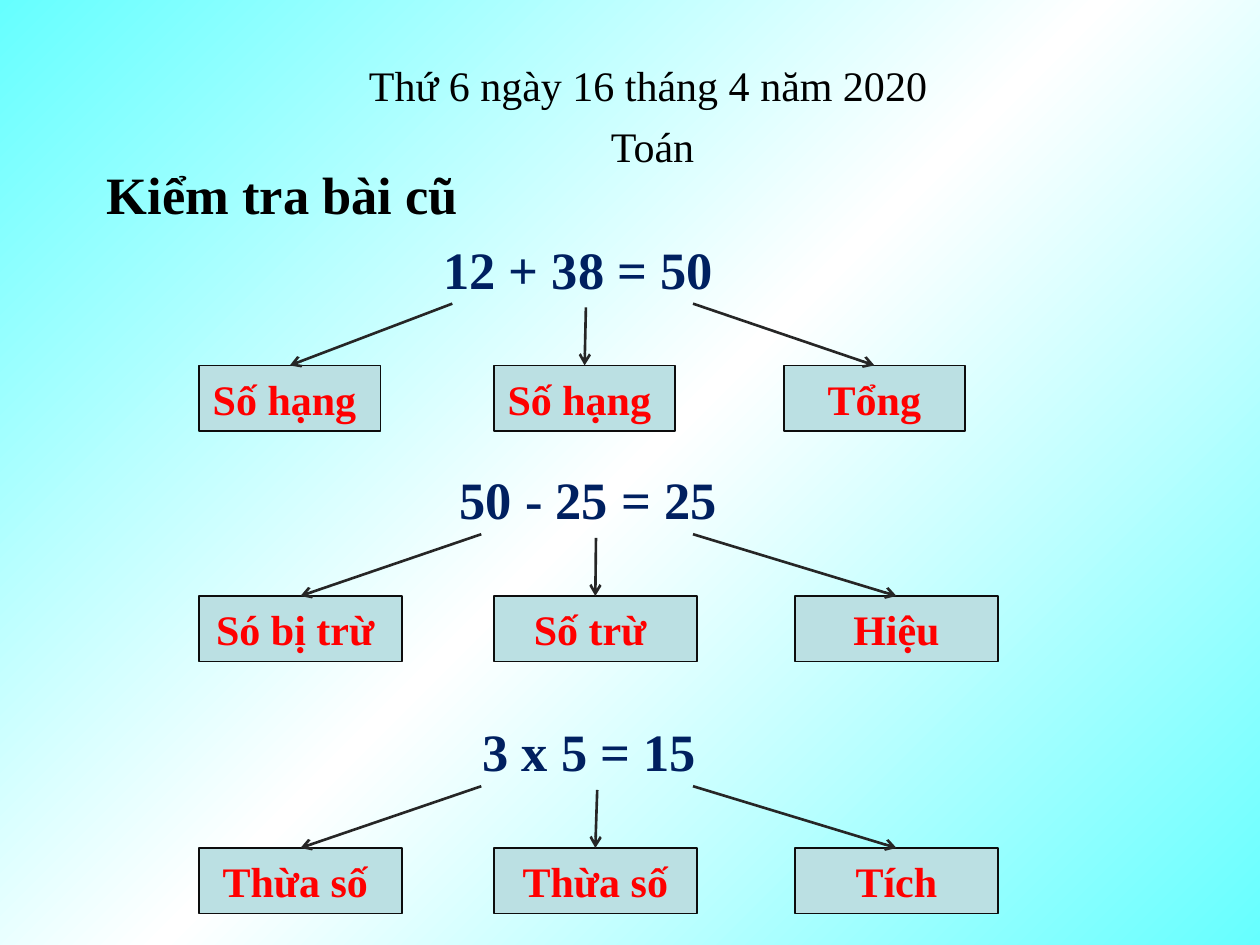
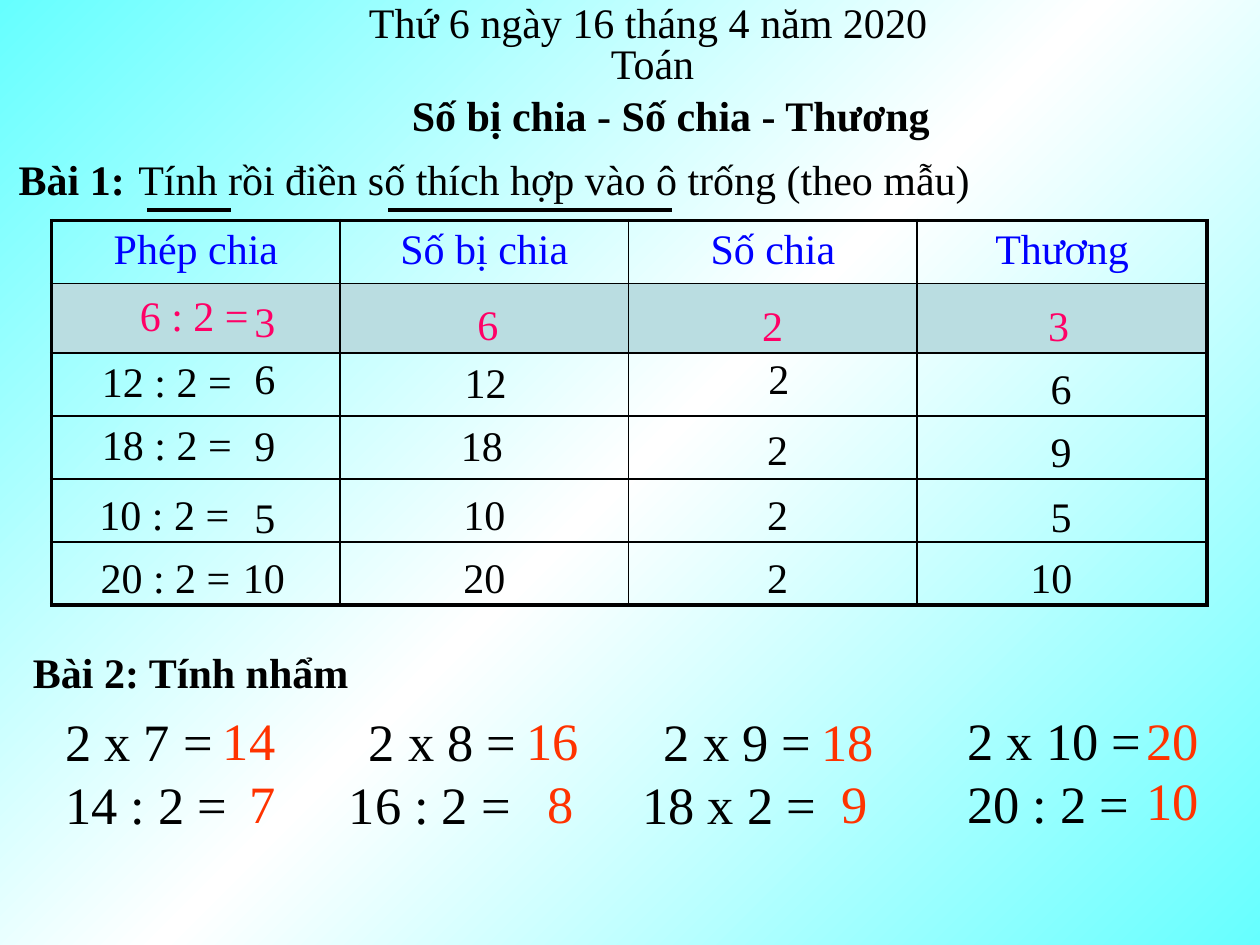
from copy import deepcopy

from lxml import etree
from pptx import Presentation
from pptx.dml.color import RGBColor
from pptx.enum import shapes, text
from pptx.oxml.ns import qn
from pptx.util import Inches, Pt

# Shared look
COLORS = {
    "cyan": "66FFFF", "white": "FFFFFF", "black": "000000", "navy": "002060",
    "red": "FF0000", "box": "BBE0E3", "box_line": "0D0D0D", "arrow": "262626",
    "head": "0000FF", "sample": "FF0066", "sample_row": "BADDE1",
    "answer": "FF3300",
}
FONT = "Times New Roman"
DATE, SUBJECT = "Thứ 6 ngày 16 tháng 4 năm 2020", "Toán"

# Review slide: equation, left, width, top, label width, label lefts,
# labels, arrow starts
EQUATIONS = [
    ("12 + 38 = 50", 3.42, 2.47, 1.83, 1.44, (1.58, 3.92, 6.22),
     ("Số hạng ", "Số hạng ", "Tổng"), (3.59, 4.65, 5.5)),
    ("50 - 25 = 25", 3.55, 2.37, 3.66, 1.61, (1.58, 3.92, 6.31),
     ("Só bị trừ ", "Số trừ ", "Hiệu"), (3.82, 4.73, 5.5)),
    ("3 x 5 = 15", 3.73, 2.02, 5.66, 1.61, (1.58, 3.92, 6.31),
     ("Thừa số ", "Thừa số", "Tích"), (3.82, 4.74, 5.5)),
]

# Exercise 1: table and the values written over it (text, left, top, width)
HEADERS = ["Phép chia", "Số bị chia", "Số chia", "Thương"]
SAMPLE = "6 : 2 ="
COL_WIDTHS = [2.29, 2.29, 2.29, 2.3]
ROW_HEIGHTS = [0.5, 0.55, 0.5, 0.5, 0.5, 0.5]
SAMPLE_VALUES = [("3", 1.92, 2.3, 0.5), ("6", 3.69, 2.32, 0.5),
                 ("2", 5.95, 2.33, 0.5), ("3", 8.22, 2.33, 0.5)]
DIVISIONS = [
    ("12 : 2 =", 0.71, 2.77, 1.69), ("6", 1.92, 2.75, 0.67),
    ("12", 3.59, 2.78, 0.67), ("2", 6, 2.75, 0.5), ("6", 8.24, 2.83, 0.67),
    ("18 : 2 =", 0.71, 3.27, 1.75), ("9", 1.92, 3.28, 0.67),
    ("18", 3.56, 3.28, 0.67), ("2", 5.99, 3.31, 0.5), ("9", 8.24, 3.33, 0.67),
    ("10 : 2 =", 0.69, 3.83, 1.39), ("5", 1.92, 3.85, 0.67),
    ("10", 3.58, 3.83, 0.67), ("2", 5.99, 3.83, 0.5), ("5", 8.24, 3.84, 0.67),
    ("20 : 2 =", 0.7, 4.33, 1.8), ("10", 1.83, 4.33, 0.66),
    ("20", 3.58, 4.33, 0.67), ("2", 5.99, 4.33, 0.5), ("10", 8.08, 4.33, 0.67),
]
UNDERLINES = [(1.17, 1.83), (3.08, 5.33)]

# Exercise 2: (text, left, top, width)
QUESTIONS = [
    ("2 x 7 =", 0.42, 5.58, 1.83), ("14 : 2 =", 0.42, 6.08, 2),
    ("2 x 8 =", 2.83, 5.58, 1.83), ("16 : 2 =", 2.67, 6.08, 1.83),
    ("2 x 9 =", 5.17, 5.58, 1.5), ("18 x 2 =", 5, 6.08, 1.75),
    ("2 x 10 =", 7.58, 5.57, 1.58), ("20 : 2 =", 7.58, 6.07, 1.83),
]
ANSWERS = [
    ("14", 1.67, 5.57, 0.67), ("7", 1.88, 6.07, 0.54),
    ("16", 4.08, 5.57, 0.67), ("8", 4.25, 6.07, 0.5),
    ("18", 6.42, 5.58, 0.67), ("9", 6.58, 6.07, 0.5),
    ("20", 9, 5.57, 0.67), ("10", 9, 6.05, 0.75),
]


def rgb(name):
    return RGBColor.from_string(COLORS[name])


def write(tf, value, color="black", size=24, bold=False, align=None):
    p = tf.paragraphs[0]
    p.alignment = align
    r = p.add_run()
    r.text = value
    for key, val in {"name": FONT, "size": Pt(size), "bold": bold}.items():
        setattr(r.font, key, val)
    r.font.color.rgb = rgb(color)


def add_text(s, value, x, y, w, wrap=True, size=24, **style):
    h = 0.61 if size == 30 else 0.5
    tf = s.shapes.add_textbox(*map(Inches, (x, y, w, h))).text_frame
    tf.word_wrap = wrap
    tf.auto_size = text.MSO_AUTO_SIZE.SHAPE_TO_FIT_TEXT
    write(tf, value, size=size, **style)


def add_line(s, x1, y1, x2, y2, color, width, arrow=False):
    c = s.shapes.add_connector(shapes.MSO_CONNECTOR.STRAIGHT,
                               *map(Inches, (x1, y1, x2, y2)))
    c.line.color.rgb, c.line.width = rgb(color), Pt(width)
    if arrow:
        etree.SubElement(c.line._get_or_add_ln(), qn("a:tailEnd"), type="arrow")
    etree.SubElement(c._element.spPr, qn("a:effectLst"))


def add_label(s, value, x, y, w, h=0.52):
    sp = s.shapes.add_shape(shapes.MSO_SHAPE.RECTANGLE,
                            *map(Inches, (x, y, w, h)))
    sp.shadow.inherit = False
    sp.fill.solid()
    sp.fill.fore_color.rgb = rgb("box")
    sp.line.color.rgb, sp.line.width = rgb("box_line"), Pt(1)
    sp.text_frame.vertical_anchor = text.MSO_ANCHOR.MIDDLE
    write(sp.text_frame, value, "red", bold=True, align=text.PP_ALIGN.CENTER)


def set_borders(cell, widths):
    tc_pr = cell._tc.get_or_add_tcPr()
    for i, (side, width) in enumerate(widths.items()):
        ln = etree.Element(qn(f"a:ln{side}"), w=str(Pt(width)))
        fill = etree.SubElement(ln, qn("a:solidFill"))
        etree.SubElement(fill, qn("a:srgbClr"), val=COLORS["black"])
        tc_pr.insert(i, ln)


def add_slide(prs, date_top, subject_top):
    s = prs.slides.add_slide(prs.slide_layouts[6])
    # Diagonal three-stop background
    fill = s.background.fill
    fill.gradient()
    fill.gradient_angle = 315
    stops = next(s.element.iter(qn("a:gsLst")))
    stops.insert(1, deepcopy(stops[0]))
    for stop, pos, color in zip(fill.gradient_stops, (0, 0.5, 1),
                                ("cyan", "white", "cyan")):
        stop.position, stop.color.rgb = pos, rgb(color)
    add_text(s, SUBJECT, 4.75, subject_top, 0.87, wrap=False)
    add_text(s, DATE, 2.83, date_top, 4.67, wrap=False)
    return s


def add_division_table(s):
    n_rows, n_cols = len(ROW_HEIGHTS), len(COL_WIDTHS)
    tbl = s.shapes.add_table(n_rows, n_cols, *map(Inches, (
        0.41, 1.75, sum(COL_WIDTHS), sum(ROW_HEIGHTS)))).table
    tbl.first_row = tbl.horz_banding = False
    for col, w in zip(tbl.columns, COL_WIDTHS):
        col.width = Inches(w)
    for row, h in zip(tbl.rows, ROW_HEIGHTS):
        row.height = Inches(h)
    for i in range(n_rows):
        for j in range(n_cols):
            cell = tbl.cell(i, j)
            if i == 1:
                cell.fill.solid()
                cell.fill.fore_color.rgb = rgb("sample_row")
            else:
                cell.fill.background()
            outer = {"L": j == 0, "R": j == n_cols - 1,
                     "T": i == 0, "B": i == n_rows - 1}
            set_borders(cell, {k: 2.25 if v else 1 for k, v in outer.items()})
    for j, header in enumerate(HEADERS):
        write(tbl.cell(0, j).text_frame, header, "head",
              align=text.PP_ALIGN.CENTER)
    cell = tbl.cell(1, 0)
    cell.margin_left, cell.margin_top = Inches(0.7), Inches(0.08)
    write(cell.text_frame, SAMPLE, "sample")


def build_review(prs):
    s = add_slide(prs, 0.42, 0.91)
    add_text(s, "Kiểm tra bài cũ", 0.75, 1.24, 3.02, wrap=False, size=30,
             bold=True)
    for equation, x, w, y, label_w, lefts, labels, starts in EQUATIONS:
        add_text(s, equation, x, y, w, wrap=False, size=30, color="navy",
                 bold=True)
        for i, (left, label, start) in enumerate(zip(lefts, labels, starts)):
            top = y + 1.07
            add_label(s, label, left, top, label_w)
            add_line(s, start, y + (0.61 if i == 1 else 0.58),
                     left + label_w / 2, top, "arrow", 1.5, arrow=True)


def build_exercises(prs):
    s = add_slide(prs, -0.08, 0.25)
    add_text(s, "Số bị chia - Số chia - Thương", 3.17, 0.66, 4.41, wrap=False,
             bold=True)
    # Exercise 1
    add_text(s, "Bài 1:", 0.05, 1.17, 1.11, bold=True)
    add_text(s, "Tính rồi điền số thích hợp vào ô trống (theo mẫu)",
             1, 1.17, 7.13)
    for x1, x2 in UNDERLINES:
        add_line(s, x1, 1.67, x2, 1.67, "black", 2.25)
    add_division_table(s)
    # Exercise 2
    add_text(s, " Bài 2: Tính nhẩm", 0.08, 5.08, 2.81, wrap=False, bold=True)
    for items, color, size in ((SAMPLE_VALUES, "sample", 24),
                               (DIVISIONS, "black", 24),
                               (QUESTIONS, "black", 30),
                               (ANSWERS, "answer", 30)):
        for item in items:
            add_text(s, *item, color=color, size=size)


def main():
    prs = Presentation()
    prs.slide_width, prs.slide_height = Inches(10), Inches(7.5)
    build_review(prs)
    build_exercises(prs)
    prs.save("out.pptx")


if __name__ == "__main__":
    main()
